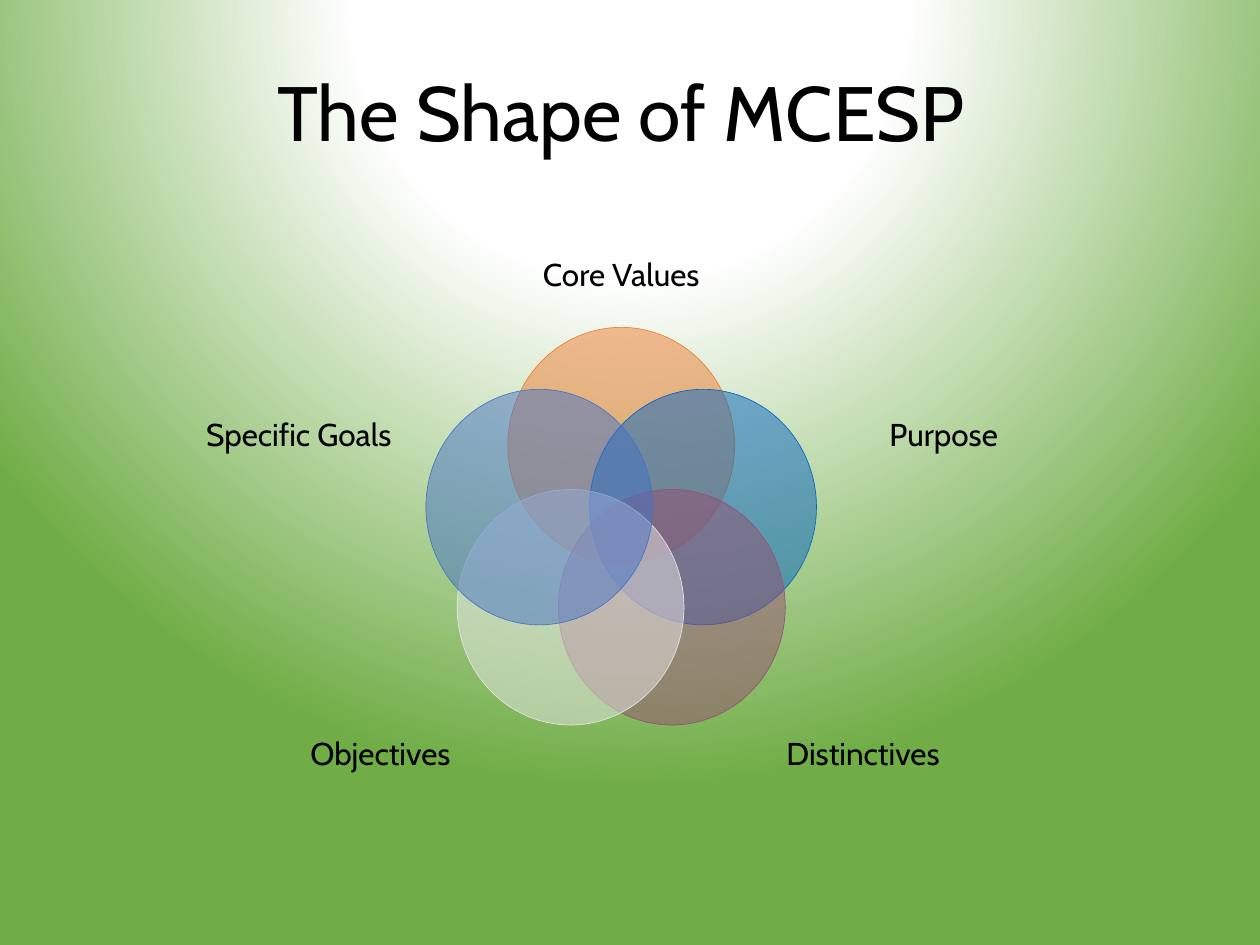
from math import cos, radians, sin

from lxml.etree import SubElement
from pptx import Presentation
from pptx.dml.color import RGBColor
from pptx.enum.shapes import MSO_SHAPE
from pptx.enum.text import MSO_ANCHOR, PP_ALIGN
from pptx.oxml import parse_xml
from pptx.oxml.ns import nsdecls, qn
from pptx.util import Pt

TITLE = "The Shape of MCESP"
RINGS = [
    ("Core Values", "ED7D31", (355, 156.6)),
    ("Purpose", "0563C1", (539.3, 248)),
    ("Distinctives", "954F72", (493.2, 430.2)),
    ("Objectives", "E7E6E6", (217.4, 430.2)),
    ("Specific Goals", "4472C4", (170.7, 248)),
]
STOPS = [(0, "FFFFFF"), (35, "FFFFFF"), (100, "70AD47")]
FOCUS = {"l": 50, "t": -80, "r": 50, "b": 180}
HUB = (355, 305.6)
REACH = (49.2, 51.2)
RING = (129.6, 134.6)
LABEL = (126.7, 33.8)


def color(code):
    return RGBColor.from_string(code)


def box(mid, size):
    (x, y), (w, h) = mid, size
    return [Pt(round(v, 2)) for v in (x - w / 2, y - h / 2, w, h)]


def write(frame, text, size, wrap):
    for key, val in {"text": text, "word_wrap": wrap,
                     "vertical_anchor": MSO_ANCHOR.MIDDLE}.items():
        setattr(frame, key, val)
    para = frame.paragraphs[0]
    para.alignment = PP_ALIGN.CENTER
    font = para.runs[0].font
    for key, val in {"name": "Cabin", "size": Pt(size)}.items():
        setattr(font, key, val)
    font.color.rgb = color("000000")
    return para


def paint(slide):
    slide.background.fill.gradient()
    old = slide.element.find(".//" + qn("a:gradFill"))
    stops = "".join(
        f'<a:gs pos="{at * 1000}"><a:srgbClr val="{code}"/></a:gs>'
        for at, code in STOPS)
    rect = " ".join(f'{side}="{val * 1000}"' for side, val in FOCUS.items())
    new = parse_xml(
        f'<a:gradFill {nsdecls("a")} rotWithShape="1"><a:gsLst>{stops}</a:gsLst>'
        f'<a:path path="circle"><a:fillToRect {rect}/></a:path></a:gradFill>')
    old.getparent().replace(old, new)


def add_ring(slide, mid, code):
    ring = slide.shapes.add_shape(MSO_SHAPE.OVAL, *box(mid, RING))
    ring.shadow.inherit = False
    ring.fill.solid()
    ring.fill.fore_color.rgb = color(code)
    tint = ring.element.spPr.find(qn("a:solidFill")).find(qn("a:srgbClr"))
    SubElement(tint, qn("a:alpha"), val="50000")
    ring.line.color.rgb = color(code)
    ring.line.width = Pt(0.37)


def main():
    deck = Presentation()
    deck.slide_width, deck.slide_height = Pt(720), Pt(540)
    slide = deck.slides.add_slide(deck.slide_layouts[5])
    paint(slide)

    title = slide.shapes.title
    spots = box((355, 66.6), (540, 90))
    for key, val in zip(("left", "top", "width", "height"), spots):
        setattr(title, key, val)
    write(title.text_frame, TITLE, 44, True).line_spacing = 0.9

    for i, (name, code, spot) in enumerate(RINGS):
        turn = radians(i * 360 / len(RINGS))
        mid = (HUB[0] + REACH[0] * sin(turn), HUB[1] - REACH[1] * cos(turn))
        add_ring(slide, mid, code)
        label = slide.shapes.add_textbox(*box(spot, LABEL))
        write(label.text_frame, name, 18, False)

    deck.save("out.pptx")


if __name__ == "__main__":
    main()
